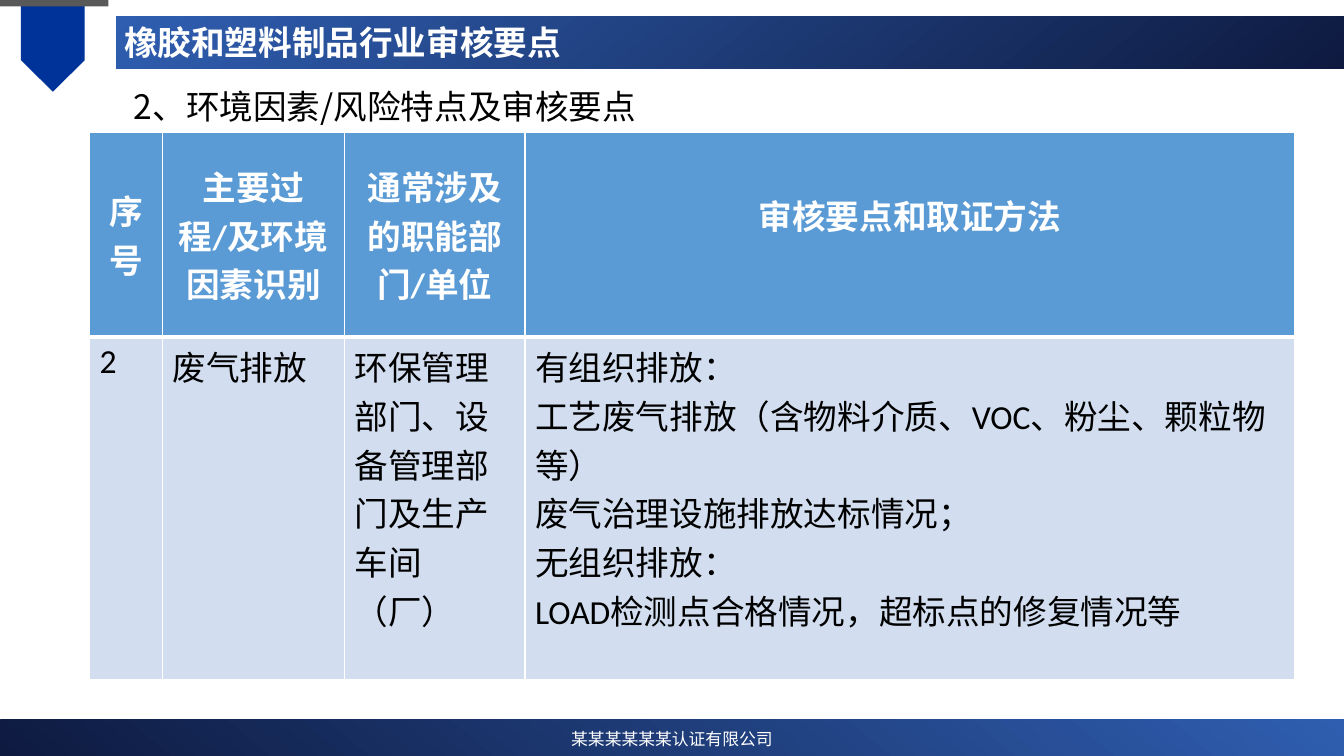
from lxml.etree import SubElement
from pptx import Presentation
from pptx.dml.color import RGBColor
from pptx.enum.shapes import MSO_SHAPE as Preset
from pptx.enum.text import MSO_ANCHOR as Anchor, MSO_AUTO_SIZE as AutoSize, PP_ALIGN as Align
from pptx.oxml import parse_xml
from pptx.oxml.ns import nsdecls, qn
from pptx.util import Pt

COLORS = {
    "navy": "0E1A40",
    "blue": "2F5EB0",
    "badge": "003399",
    "gray": "595959",
    "header": "5B9BD5",
    "body": "D2DEEF",
    "white": "FFFFFF",
    "black": "000000",
}
CJK_FONT = "Noto Sans CJK SC"
LATIN_FONT = "Calibri"

COLUMN_WIDTHS = [52, 130, 129, 550]
ROW_HEIGHTS = [146, 245]
TABLE_ROWS = [
    ["序号", "主要过程/及环境因素识别", "通常涉及的职能部门/单位", "审核要点和取证方法"],
    [
        "2",
        "废气排放",
        "环保管理部门、设备管理部门及生产车间（厂）",
        "有组织排放：\n"
        "工艺废气排放（含物料介质、VOC、粉尘、颗粒物等）\n"
        "废气治理设施排放达标情况；\n"
        "无组织排放：\n"
        "LOAD检测点合格情况，超标点的修复情况等",
    ],
]


def rgb(name):
    return RGBColor.from_string(COLORS[name])


def write_text(text_frame, text, size, color, bold=False, align=Align.LEFT, font=CJK_FONT):
    text_frame.text = text
    for paragraph in text_frame.paragraphs:
        paragraph.alignment = align
        for run in paragraph.runs:
            run.font.size = Pt(size)
            run.font.bold = bold
            run.font.name = font
            run.font.color.rgb = rgb(color)
            east_asian = SubElement(run.font._element, qn("a:ea"))
            east_asian.set("typeface", CJK_FONT)


def add_block(slide, preset, left, top, width, height, color=None):
    shape = slide.shapes.add_shape(preset, Pt(left), Pt(top), Pt(width), Pt(height))
    shape.shadow.inherit = False
    shape.line.fill.background()
    if color:
        shape.fill.solid()
        shape.fill.fore_color.rgb = rgb(color)
    return shape


def add_gradient_bar(slide, left, top, width, height, angle):
    bar = add_block(slide, Preset.RECTANGLE, left, top, width, height)
    bar.fill.gradient()
    bar.fill.gradient_angle = angle
    for stop, color in zip(bar.fill.gradient_stops, ("navy", "blue")):
        stop.color.rgb = rgb(color)
    return bar


def add_badge(slide):
    add_block(slide, Preset.RECTANGLE, 15, 0, 45.5, 43, "badge")
    tip = add_block(slide, Preset.ISOSCELES_TRIANGLE, 15, 43, 45.5, 22.5, "badge")
    tip.rotation = 180
    add_block(slide, Preset.RECTANGLE, 0, 0, 77.5, 4.5, "gray")


def set_title(slide, text):
    title = slide.shapes.title
    title.left, title.top, title.width, title.height = Pt(81.5), Pt(11.5), Pt(828), Pt(40)
    write_text(title.text_frame, text, 24, "white", bold=True)
    title.text_frame.auto_size = AutoSize.NONE
    title.text_frame.vertical_anchor = Anchor.MIDDLE
    title.text_frame.paragraphs[0].line_spacing = 0.9


def add_subtitle(slide, text):
    box = slide.shapes.add_textbox(Pt(88.5), Pt(49), Pt(818), Pt(46))
    box.text_frame.word_wrap = True
    write_text(box.text_frame, text, 24, "black")
    paragraph = box.text_frame.paragraphs[0]
    paragraph.line_spacing = 1.3
    paragraph.space_before = paragraph.space_after = Pt(6)


def set_borders(cell, top, bottom):
    properties = cell._tc.get_or_add_tcPr()
    widths = {"lnL": 1, "lnR": 1, "lnT": top, "lnB": bottom}
    for index, (side, width) in enumerate(widths.items()):
        border = parse_xml(
            f'<a:{side} {nsdecls("a")} w="{Pt(width)}"><a:solidFill>'
            f'<a:srgbClr val="{COLORS["white"]}"/></a:solidFill></a:{side}>'
        )
        properties.insert(index, border)


def add_audit_table(slide):
    frame = slide.shapes.add_table(
        len(ROW_HEIGHTS), len(COLUMN_WIDTHS),
        Pt(64), Pt(94.5), Pt(sum(COLUMN_WIDTHS)), Pt(sum(ROW_HEIGHTS)),
    )
    table = frame.table
    for column, width in zip(table.columns, COLUMN_WIDTHS):
        column.width = Pt(width)
    for row_index, (row, height, texts) in enumerate(zip(table.rows, ROW_HEIGHTS, TABLE_ROWS)):
        row.height = Pt(height)
        is_header = row_index == 0
        for cell, text in zip(row.cells, texts):
            cell.fill.solid()
            cell.fill.fore_color.rgb = rgb("header" if is_header else "body")
            cell.vertical_anchor = Anchor.MIDDLE if is_header else Anchor.TOP
            write_text(
                cell.text_frame, text, 24,
                "white" if is_header else "black",
                bold=is_header,
                align=Align.CENTER if is_header else Align.LEFT,
                font=LATIN_FONT,
            )
            set_borders(cell, 1 if is_header else 3, 3 if is_header else 1)
    table.cell(0, 3).margin_bottom = Pt(32)


def main():
    presentation = Presentation()
    presentation.slide_width, presentation.slide_height = Pt(960), Pt(540)
    slide = presentation.slides.add_slide(presentation.slide_layouts[5])

    footer = add_gradient_bar(slide, 0, 514, 960, 28, 50)
    write_text(footer.text_frame, "某某某某某某认证有限公司", 12, "white", align=Align.CENTER)
    footer.text_frame.vertical_anchor = Anchor.MIDDLE

    add_badge(slide)
    title_bar = add_gradient_bar(slide, 83, 11.5, 877, 37.5, 130)
    slide.shapes.title._element.addprevious(title_bar._element)
    set_title(slide, "橡胶和塑料制品行业审核要点")
    add_subtitle(slide, "2、环境因素/风险特点及审核要点")
    add_audit_table(slide)

    presentation.save("out.pptx")


if __name__ == "__main__":
    main()
